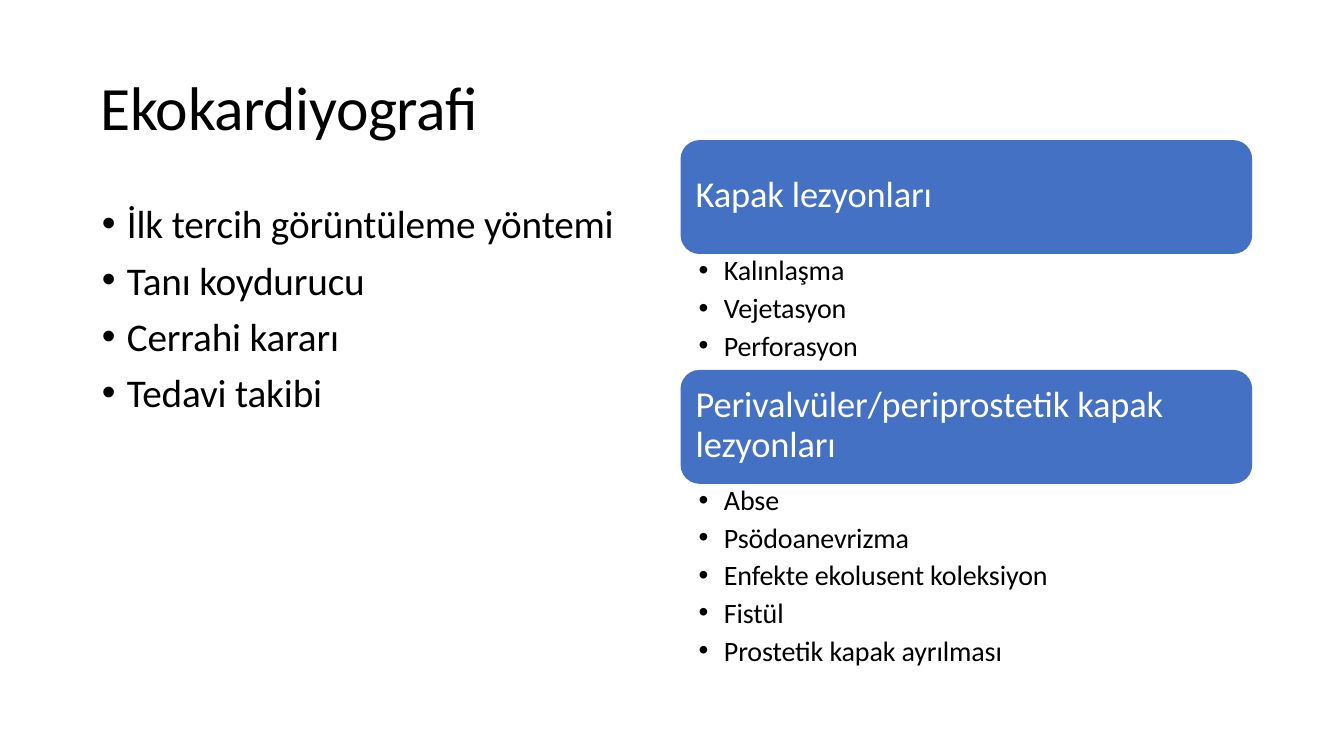
from dataclasses import dataclass

from lxml.etree import SubElement
from pptx import Presentation
from pptx.dml.color import RGBColor
from pptx.enum.shapes import MSO_SHAPE as Shape
from pptx.enum.text import MSO_ANCHOR as Anchor, PP_ALIGN as Align
from pptx.oxml.ns import qn
from pptx.util import Pt

PX = 9144
BLACK = RGBColor(0x00, 0x00, 0x00)
WHITE = RGBColor(0xFF, 0xFF, 0xFF)
BLUE = RGBColor(0x44, 0x71, 0xC4)


@dataclass
class Line:
    """One paragraph with its size, colour, spacing and bullet indent."""
    text: str
    size: int
    before: float
    color: RGBColor = BLACK
    indent: int = 0
    leading: float = 0
    tracking: int = -10


class SlideBuilder:
    """Draws styled elements on one slide, measured in hundredths of an inch."""
    font = "Calibri"
    hanging = 25

    def __init__(self, slide):
        self.slide = slide

    def card(self, left, top, width, height):
        """Add a filled rounded card."""
        card = self.slide.shapes.add_shape(
            Shape.ROUNDED_RECTANGLE, *(n * PX for n in (left, top, width, height)))
        card.shadow.inherit = False
        card.fill.solid()
        card.fill.fore_color.rgb = BLUE
        card.line.fill.background()

    def text(self, left, top, width, height, inset, lines):
        """Add a text box holding the given lines."""
        box = self.slide.shapes.add_textbox(*(n * PX for n in (left, top, width, height)))
        frame = box.text_frame
        frame.word_wrap = True
        frame.vertical_anchor = Anchor.TOP
        frame.margin_left = frame.margin_right = frame.margin_bottom = 0
        frame.margin_top = inset * PX
        frame.text = "\n".join(line.text for line in lines)
        for paragraph, line in zip(frame.paragraphs, lines):
            self.format(paragraph, line)

    def format(self, paragraph, line):
        """Apply a line's style to its paragraph."""
        paragraph.alignment = Align.LEFT
        paragraph.space_before = Pt(line.before)
        if line.leading:
            paragraph.line_spacing = Pt(line.leading)
        if line.indent:
            properties = paragraph._p.get_or_add_pPr()
            properties.set("marL", str(line.indent * PX))
            properties.set("indent", str(-self.hanging * PX))
            SubElement(properties, qn("a:buFont"), typeface="Arial")
            SubElement(properties, qn("a:buChar"), char="•")
        for run in paragraph.runs:
            run.font.name = self.font
            run.font.size = Pt(line.size)
            run.font.color.rgb = line.color
            run.font._element.set("spc", str(line.tracking))


def bullets(texts, size, first, following, indent):
    """Return bulleted lines with a separate gap above the first."""
    return [Line(text, size, following if i else first, indent=indent)
            for i, text in enumerate(texts)]


def main():
    """Build and save the echocardiography slide."""
    deck = Presentation()
    deck.slide_width, deck.slide_height = 1333 * PX, 750 * PX
    page = SlideBuilder(deck.slides.add_slide(deck.slide_layouts[6]))

    page.text(100, 42, 1020, 100, 26, [Line("Ekokardiyografi", 44, 1.1, tracking=-30)])
    benefits = ["İlk tercih görüntüleme yöntemi", "Tanı koydurucu",
                "Cerrahi kararı", "Tedavi takibi"]
    page.text(100, 187, 516, 227, 11, bullets(benefits, 28, 7.8, 6.6, 26))

    for top in (139, 367):
        page.card(675, top, 567, 113)

    page.text(690, 169, 240, 46, 1, [Line("Kapak lezyonları", 26, 1.1, WHITE)])
    valve_lesions = ["Kalınlaşma", "Vejetasyon", "Perforasyon"]
    page.text(692, 246, 162, 115, 5, bullets(valve_lesions, 20, 3.8, 2.9, 26))

    perivalvular_heading = Line("Perivalvüler/periprostetik kapak lezyonları",
                                26, 4.2, WHITE, leading=28.6)
    perivalvular_lesions = ["Abse", "Psödoanevrizma", "Enfekte ekolusent koleksiyon",
                            "Fistül", "Prostetik kapak ayrılması"]
    page.text(690, 376, 471, 287, 6, [
        perivalvular_heading, *bullets(perivalvular_lesions, 20, 12.5, 2.9, 28)])

    deck.save("out.pptx")


if __name__ == "__main__":
    main()
